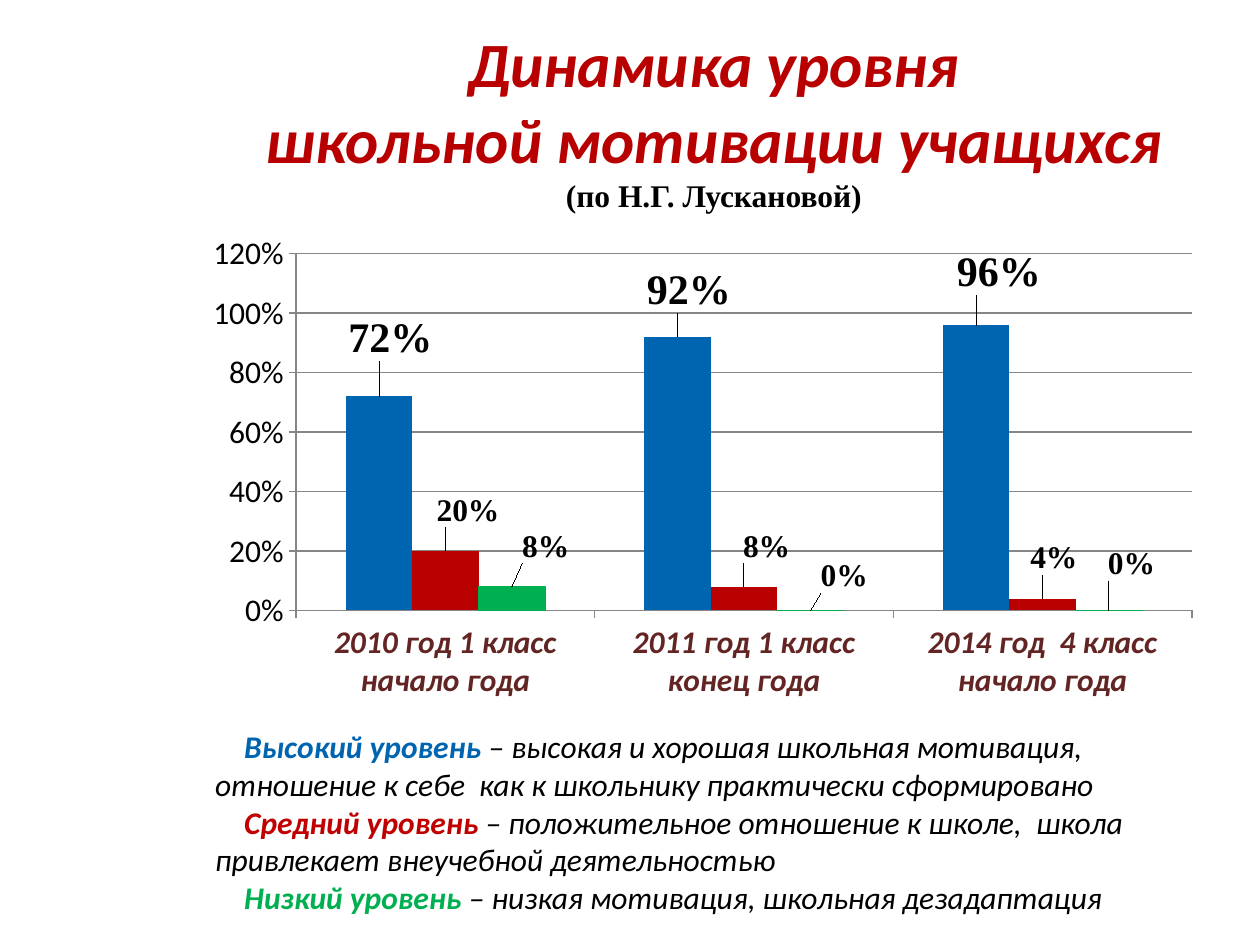
from dataclasses import dataclass

from lxml import etree
from pptx import Presentation
from pptx.chart.data import CategoryChartData
from pptx.dml.color import RGBColor
from pptx.enum.chart import XL_CHART_TYPE, XL_LABEL_POSITION, XL_TICK_MARK
from pptx.enum.text import MSO_ANCHOR, PP_ALIGN
from pptx.oxml.ns import qn
from pptx.util import Inches, Pt

COLUMN = XL_CHART_TYPE.COLUMN_CLUSTERED
OUTER = XL_LABEL_POSITION.OUTSIDE_END
TICK = XL_TICK_MARK.OUTSIDE
MIDDLE = MSO_ANCHOR.MIDDLE
CENTER = PP_ALIGN.CENTER
LEFT = PP_ALIGN.LEFT

BLACK = RGBColor(0x00, 0x00, 0x00)
BLUE = RGBColor(0x00, 0x65, 0xB0)
RED = RGBColor(0xB8, 0x00, 0x00)
CRIMSON = RGBColor(0xC0, 0x00, 0x00)
GREEN = RGBColor(0x00, 0xB0, 0x50)
BROWN = RGBColor(0x63, 0x25, 0x23)
GRAY = RGBColor(0x86, 0x86, 0x86)
SANS = "Calibri"
SERIF = "Times New Roman"


@dataclass
class Series:
    name: str
    vals: tuple
    color: RGBColor
    size: int
    shifts: tuple


@dataclass
class Level:
    name: str
    note: str
    color: RGBColor


YEARS = ("2010 год 1 класс начало года", "2011 год 1 класс конец года",
         "2014 год  4 класс начало года")
SERIES = (
    Series("Series 1", (0.72, 0.92, 0.96), BLUE, 24,
           ((0.01, -0.05), (0.01, -0.03), (0.02, -0.04))),
    Series("Series 2", (0.2, 0.08, 0.04), RED, 18,
           ((0.02, -0.03), (0.02, -0.03), (0.01, -0.03))),
    Series("Series 3", (0.08, 0, 0), GREEN, 18,
           ((0.03, -0.03), (0.03, -0.02), (0.02, -0.04))),
)
LEVELS = (
    Level("Высокий уровень ", "– высокая и хорошая школьная мотивация, "
          "отношение к себе  как к школьнику практически сформировано", BLUE),
    Level("Средний уровень ", "– положительное отношение к школе,  школа "
          "привлекает внеучебной деятельностью", CRIMSON),
    Level("Низкий уровень ", "– низкая мотивация, школьная дезадаптация", GREEN),
)


def style(font, *, size=18, color=BLACK, face=SANS, bold=False, italic=False) -> None:
    font.size = Pt(size)
    font.color.rgb = color
    font.name = face
    font.bold = bold
    font.italic = italic


def write(para, text: str, **form) -> None:
    run = para.add_run()
    run.text = text
    style(run.font, **form)


def add_box(slide, left: float, top: float, width: float, height: float):
    frame = slide.shapes.add_textbox(
        Inches(left), Inches(top), Inches(width), Inches(height)).text_frame
    frame.word_wrap = True
    return frame


def add_lines(frame, count: int, align) -> list:
    lines = [frame.paragraphs[0]] + [frame.add_paragraph() for _ in range(count - 1)]
    for line in lines:
        line.alignment = align
    return lines


def add_layout(**parts):
    layout = etree.Element(qn("c:layout"))
    manual = etree.SubElement(layout, qn("c:manualLayout"))
    for tag, val in parts.items():
        etree.SubElement(manual, qn(f"c:{tag}")).set("val", str(val))
    return layout


def draw_title(slide) -> None:
    frame = add_box(slide, 1.54, 0.29, 8.25, 1.09)
    frame.vertical_anchor = MIDDLE
    frame.margin_top = Inches(0.27)
    first, second, source = add_lines(frame, 3, CENTER)
    head = dict(size=36, color=RED, bold=True, italic=True)
    write(first, "Динамика уровня", **head)
    write(second, "школьной мотивации учащихся", **head)
    write(source, "(по Н.Г. Лускановой)", face=SERIF, bold=True)


def paint_series(bars, data: Series) -> None:
    bars.format.fill.solid()
    bars.format.fill.fore_color.rgb = data.color
    bars.invert_if_negative = False
    if data.color == GREEN:
        bars.format.line.color.rgb = GREEN
        bars.format.line.width = Pt(0.75)
    form = dict(size=data.size, face=SERIF, bold=True)
    labels = bars.data_labels
    labels.show_value = True
    labels.number_format = "0%"
    labels.number_format_is_linked = False
    labels.position = OUTER
    style(labels.font, **form)
    for num, (x, y) in enumerate(data.shifts):
        label = bars.points[num].data_label
        style(label.font, **form)
        label.position = OUTER
        mark = bars._element.xpath(f"c:dLbls/c:dLbl/c:idx[@val='{num}']")[0]
        mark.addnext(add_layout(x=x, y=y))


def draw_chart(slide) -> None:
    data = CategoryChartData(number_format="0%")
    data.categories = YEARS
    for item in SERIES:
        data.add_series(item.name, item.vals)
    chart = slide.shapes.add_chart(
        COLUMN, Inches(1), Inches(1.15), Inches(9), Inches(4.8), data).chart
    chart.has_legend = False
    chart.has_title = False
    style(chart.font)
    plot = chart.plots[0]
    plot.gap_width = 150
    plot.overlap = 0
    plot.vary_by_categories = False
    for bars, item in zip(plot.series, SERIES):
        paint_series(bars, item)

    years, scale = chart.category_axis, chart.value_axis
    for axis in (years, scale):
        axis.major_tick_mark = TICK
        axis.format.line.color.rgb = GRAY
    style(years.tick_labels.font, color=BROWN, bold=True, italic=True)
    style(scale.tick_labels.font)
    scale.minimum_scale = 0
    scale.maximum_scale = 1.2
    scale.major_unit = 0.2
    scale.tick_labels.number_format = "0%"
    scale.tick_labels.number_format_is_linked = False
    scale.has_major_gridlines = True
    scale.major_gridlines.format.line.color.rgb = GRAY

    area = chart._chartSpace.xpath("c:chart/c:plotArea")[0]
    for old in area.findall(qn("c:layout")):
        area.remove(old)
    area.insert(0, add_layout(layoutTarget="inner", xMode="edge", yMode="edge",
                              x=0.15, y=0.18, w=0.79, h=0.59))


def draw_levels(slide) -> None:
    frame = add_box(slide, 1.61, 5.72, 8.19, 1.62)
    for para, level in zip(add_lines(frame, len(LEVELS), LEFT), LEVELS):
        para._p.get_or_add_pPr().set("indent", str(Inches(0.23)))
        write(para, level.name, color=level.color, bold=True, italic=True)
        write(para, level.note, italic=True)


def main() -> None:
    deck = Presentation()
    deck.slide_width = Inches(10)
    deck.slide_height = Inches(7.5)
    slide = deck.slides.add_slide(deck.slide_layouts[6])
    draw_title(slide)
    draw_chart(slide)
    draw_levels(slide)
    deck.save("out.pptx")


if __name__ == "__main__":
    main()
